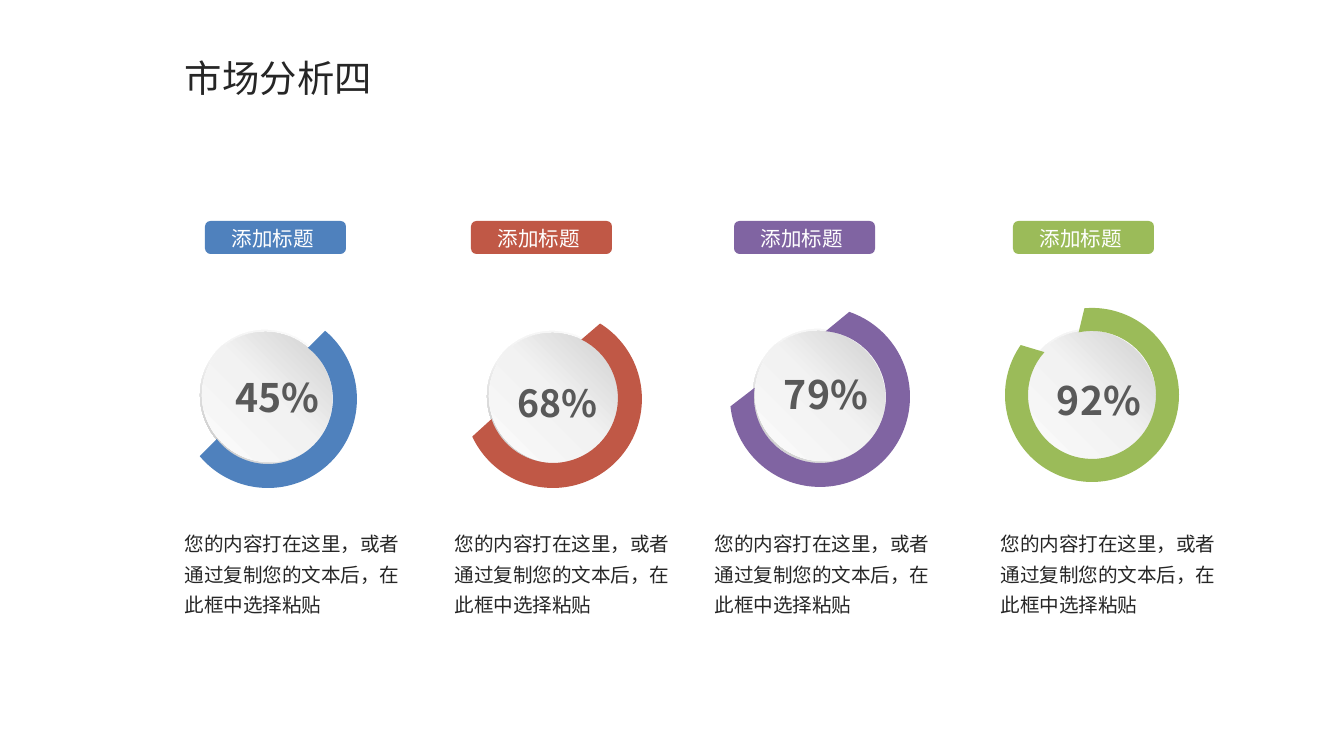
from collections import namedtuple
from math import ceil, cos, radians, sin, tan

from lxml import etree
from pptx import Presentation
from pptx.dml.color import RGBColor
from pptx.enum.shapes import MSO_SHAPE
from pptx.enum.text import MSO_AUTO_SIZE, PP_ALIGN
from pptx.oxml.ns import qn
from pptx.util import Pt

DONUT, OVAL = MSO_SHAPE.DONUT, MSO_SHAPE.OVAL
TAG_SHAPE = MSO_SHAPE.FLOWCHART_ALTERNATE_PROCESS
GROW = MSO_AUTO_SIZE.SHAPE_TO_FIT_TEXT
LEFT, CENTER = PP_ALIGN.LEFT, PP_ALIGN.CENTER
SCALE = 914400 / 134.4
FONT = "Noto Sans CJK SC"
COLORS = {
    "ink": "262626", "number": "595959", "white": "FFFFFF",
    "blue": "4F81BD", "red": "C05846", "purple": "8064A2", "green": "9BBB59",
}
RIM_STOPS = [(0, "FFFFFF"), (55, "F2F2F2"), (100, "A6A6A6")]
FACE_STOPS = [(0, "FFFFFF"), (51, "F2F2F2"), (100, "BFBFBF")]
BODY = "您的内容打在这里，或者通过复制您的文本后，在此框中选择粘贴"
Arc = namedtuple("Arc", "center radius start end")
Ring = namedtuple("Ring", "frame rotation outer inner")
Column = namedtuple("Column", "color tag body disc number percent size ring")
COLUMNS = [
    Column("blue", 205, 175, (201, 329), (222, 366, 121, 60), "45%", 21,
           Ring((207, 379, 179, 97), 315, Arc((268, 399), 89, -50, 140),
                Arc((268, 399), 65, -52, 142))),
    Column("red", 471, 445, (488, 330), (504, 373, 110, 59), "68%", 20,
           Ring((488, 364, 175, 118), 318.1, Arc((553, 399), 89, -58, 155),
                Arc((553, 398), 65, -64, 161))),
    Column("purple", 734, 705, (754, 328), (771, 363, 122, 60), "79%", 21,
           Ring((743, 343, 179, 138), 321.5, Arc((820, 397), 90, -71, 174),
                Arc((820, 397), 66, -85, 188))),
    Column("green", 1013, 991, (1025, 328), (1044, 369, 122, 60), "92%", 21,
           Ring((1008, 314, 172, 168), 330.2, Arc((1092, 395), 87, -95, 215),
                Arc((1092, 395), 64, -102, 222))),
]


def px(value):
    """Turn pixels into EMU."""
    return round(value * SCALE)


def rgb(name):
    """Look up a colour by name."""
    return RGBColor.from_string(COLORS[name])


def add_text(page, text, frame, *, size, color="ink", bold=False, align=LEFT,
             wrap=True, inset=(13, 7), spacing=None):
    """Add a one-paragraph text box."""
    box = page.shapes.add_textbox(*map(px, frame))
    body = box.text_frame
    body.word_wrap = wrap
    body.auto_size = GROW
    body.margin_left = body.margin_right = px(inset[0])
    body.margin_top = body.margin_bottom = px(inset[1])
    para = body.paragraphs[0]
    para.alignment = align
    if spacing:
        para.line_spacing = spacing
    span = para.add_run()
    span.text = text
    span.font.size = Pt(size)
    span.font.bold = bold
    span.font.color.rgb = rgb(color)
    span.font.name = FONT
    etree.SubElement(span.font._element, qn("a:ea"), typeface=FONT)


def paint(shape, color):
    """Give a shape a flat fill without line or shadow."""
    shape.shadow.inherit = False
    shape.line.fill.background()
    shape.fill.solid()
    shape.fill.fore_color.rgb = rgb(color)


def add_gradient_round(page, kind, frame, stops, angle):
    """Add a tilted round shape whose gradient keeps its direction."""
    shape = page.shapes.add_shape(kind, *map(px, frame))
    shape.shadow.inherit = False
    shape.line.fill.background()
    shape.rotation = 315
    shape.fill.gradient()
    shape.fill.gradient_angle = angle
    gradient = shape._element.spPr.find(qn("a:gradFill"))
    gradient.set("rotWithShape", "0")
    stop_list = gradient.find(qn("a:gsLst"))
    for old_stop in list(stop_list):
        stop_list.remove(old_stop)
    for position, color in stops:
        stop = etree.SubElement(stop_list, qn("a:gs"), pos=str(position * 1000))
        etree.SubElement(stop, qn("a:srgbClr"), val=color)
    return shape


def add_disc(page, left, top):
    """Add a raised disc made of a thin rim and a face."""
    rim = add_gradient_round(page, DONUT, (left, top, 132, 136), RIM_STOPS, 225)
    rim.adjustments[0] = 0.05
    add_gradient_round(page, OVAL, (left + 2, top + 2, 128, 132), FACE_STOPS, 45)


def arc_points(arc):
    """List the start of an arc and the three points of each of its curves."""
    count = ceil(abs(arc.end - arc.start) / 90)
    step = radians(arc.end - arc.start) / count
    handle = 4 / 3 * tan(step / 4)

    def spot(angle, pull):
        """Find a point on the arc, moved along its tangent."""
        return (arc.center[0] + arc.radius * (cos(angle) - pull * sin(angle)),
                arc.center[1] + arc.radius * (sin(angle) + pull * cos(angle)))

    angles = [radians(arc.start) + step * index for index in range(count + 1)]
    points = [spot(angles[0], 0)]
    for first, last in zip(angles, angles[1:]):
        points += [spot(first, handle), spot(last, -handle), spot(last, 0)]
    return points


def add_command(outline, name, points=()):
    """Add one drawing command to an outline."""
    command = etree.SubElement(outline, qn(f"a:{name}"))
    for x, y in points:
        etree.SubElement(command, qn("a:pt"), x=str(px(x)), y=str(px(y)))


def add_ring(page, ring, color):
    """Add a turned open ring with curved edges."""
    left, top, width, height = ring.frame
    turn = radians(-ring.rotation)

    def to_local(point):
        """Turn a slide point back into the frame of the ring."""
        x, y = point[0] - left - width / 2, point[1] - top - height / 2
        return (x * cos(turn) - y * sin(turn) + width / 2,
                x * sin(turn) + y * cos(turn) + height / 2)

    builder = page.shapes.build_freeform(px(left), px(top))
    builder.add_line_segments([(px(left + width), px(top)),
                               (px(left + width), px(top + height))])
    shape = builder.convert_to_shape()
    outline = next(shape._element.iter(qn("a:path")))
    for command in list(outline):
        outline.remove(command)
    outer = list(map(to_local, arc_points(ring.outer)))
    inner = list(map(to_local, arc_points(ring.inner)))[::-1]
    for name, points in (("moveTo", outer), ("lnTo", inner)):
        add_command(outline, name, points[:1])
        for index in range(1, len(points), 3):
            add_command(outline, "cubicBezTo", points[index:index + 3])
    add_command(outline, "close")
    shape.rotation = ring.rotation
    paint(shape, color)


def add_tag(page, left, color):
    """Add a coloured heading tag."""
    paint(page.shapes.add_shape(TAG_SHAPE, *map(px, (left, 221, 141, 33))), color)
    add_text(page, "添加标题", (left + 13, 219, 110, 39), size=11,
             color="white", align=CENTER, wrap=False)


def main():
    """Build the slide and save it."""
    deck = Presentation()
    deck.slide_width, deck.slide_height = px(1344), px(756)
    page = deck.slides.add_slide(deck.slide_layouts[6])
    add_text(page, "市场分析四", (175, 50, 208, 55), size=20, wrap=False,
             inset=(10, 5))
    for column in COLUMNS:
        add_disc(page, *column.disc)
        add_text(page, column.percent, column.number, size=column.size,
                 color="number", bold=True)
    for column in COLUMNS:
        add_ring(page, column.ring, column.color)
    for column in COLUMNS:
        add_tag(page, column.tag, column.color)
    for column in COLUMNS:
        add_text(page, BODY, (column.body, 520, 242, 102), size=10.5,
                 inset=(10, 5), spacing=1.3)
    deck.save("out.pptx")


if __name__ == "__main__":
    main()
